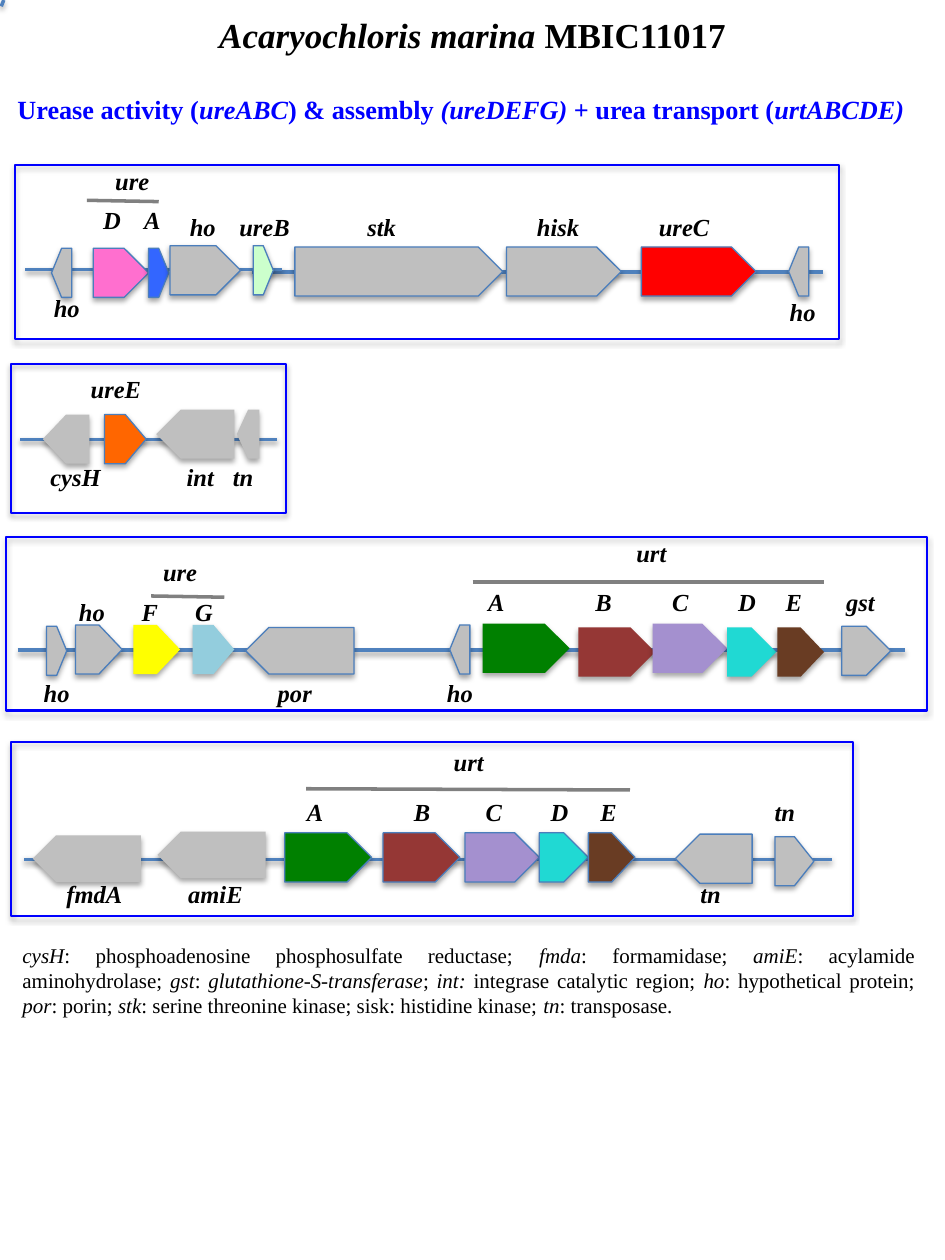
from lxml.etree import SubElement
from pptx import Presentation
from pptx.dml.color import RGBColor
from pptx.enum.shapes import MSO_CONNECTOR, MSO_SHAPE
from pptx.enum.text import MSO_ANCHOR, MSO_AUTO_SIZE, PP_ALIGN
from pptx.oxml.ns import qn
from pptx.util import Inches, Pt

BLACK = RGBColor(0x00, 0x00, 0x00)
FRAME_BLUE = RGBColor(0x00, 0x00, 0xFF)
BACKBONE = RGBColor(0x4F, 0x81, 0xBD)
OUTLINE = RGBColor(0x4B, 0x7E, 0xBC)
BAR_GRAY = RGBColor(0x80, 0x80, 0x80)
GRAY = RGBColor(0xBF, 0xBF, 0xBF)
PINK = RGBColor(0xFF, 0x6F, 0xCF)
BLUE = RGBColor(0x33, 0x66, 0xFF)
MINT = RGBColor(0xCC, 0xFF, 0xCC)
RED = RGBColor(0xFF, 0x00, 0x00)
ORANGE = RGBColor(0xFF, 0x66, 0x00)
YELLOW = RGBColor(0xFF, 0xFF, 0x00)
SKY = RGBColor(0x93, 0xCD, 0xDD)
GREEN = RGBColor(0x00, 0x80, 0x00)
MAROON = RGBColor(0x95, 0x37, 0x35)
PURPLE = RGBColor(0xA4, 0x90, 0xCF)
CYAN = RGBColor(0x20, 0xD9, 0xD3)
BROWN = RGBColor(0x69, 0x3C, 0x23)

# Gene options: reading direction and outline
FORWARD = {}
REVERSE = {"flipped": True}
PLAIN = {"outlined": False}
PLAIN_REVERSE = {**PLAIN, **REVERSE}
LOW_REVERSE = {**REVERSE, "height": 0.37}
LOW_PLAIN_REVERSE = {**PLAIN_REVERSE, "height": 0.37}

# frame: left, top, width, height; lines: x1, y1, x2, y2
# genes: left, top, width, fill, options; labels: centre y -> (centre x, text)
TRACKS = [
    {"frame": (0.12, 1.31, 6.54, 1.38),
     "backbones": [(2, 2.16, 6.53, 2.16), (0.2, 2.14, 2.24, 2.14)],
     "bars": [(0.69, 1.59, 1.26, 1.6)],
     "genes": [(0.74, 1.97, 0.44, PINK, FORWARD), (1.18, 1.97, 0.16, BLUE, FORWARD),
               (2.01, 1.95, 0.16, MINT, FORWARD), (1.35, 1.95, 0.56, GRAY, FORWARD),
               (5.09, 1.96, 0.91, RED, FORWARD), (2.34, 1.96, 1.65, GRAY, FORWARD),
               (6.26, 1.96, 0.16, GRAY, REVERSE), (4.02, 1.96, 0.91, GRAY, FORWARD),
               (0.41, 1.97, 0.16, GRAY, REVERSE)],
     "labels": {1.44: [(1.05, "ure")], 1.75: [(0.89, "D"), (1.21, "A")],
                1.8: [(1.61, "ho"), (2.1, "ureB"), (3.03, "stk"), (4.43, "hisk"),
                      (5.43, "ureC")],
                2.45: [(0.53, "ho")], 2.48: [(6.37, "ho")]}},
    {"frame": (0.09, 2.89, 2.18, 1.18),
     "backbones": [(0.16, 3.49, 2.2, 3.49)],
     "bars": [],
     "genes": [(0.83, 3.29, 0.33, ORANGE, FORWARD), (0.34, 3.29, 0.37, GRAY, PLAIN_REVERSE),
               (1.24, 3.25, 0.62, GRAY, PLAIN_REVERSE),
               (1.88, 3.25, 0.18, GRAY, PLAIN_REVERSE)],
     "labels": {3.09: [(0.92, "ureE")],
                3.79: [(0.6, "cysH"), (1.59, "int"), (1.93, "tn")]}},
    {"frame": (0.05, 4.26, 7.31, 1.38),
     "backbones": [(0.14, 5.16, 7.18, 5.16)],
     "bars": [(3.75, 4.62, 6.54, 4.62), (1.2, 4.73, 1.78, 4.74)],
     "genes": [(3.83, 4.95, 0.69, GREEN, PLAIN), (4.59, 4.98, 0.61, MAROON, PLAIN),
               (5.18, 4.95, 0.59, PURPLE, PLAIN), (5.77, 4.98, 0.39, CYAN, PLAIN),
               (6.17, 4.98, 0.37, BROWN, PLAIN), (1.95, 4.98, 0.86, GRAY, LOW_REVERSE),
               (3.57, 4.96, 0.16, GRAY, REVERSE), (1.53, 4.96, 0.33, SKY, PLAIN),
               (1.06, 4.96, 0.37, YELLOW, PLAIN), (0.6, 4.96, 0.37, GRAY, FORWARD),
               (0.37, 4.97, 0.16, GRAY, FORWARD), (6.68, 4.97, 0.39, GRAY, FORWARD)],
     "labels": {4.39: [(5.17, "urt")], 4.54: [(1.43, "ure")],
                4.78: [(3.94, "A"), (4.79, "B"), (5.4, "C"), (5.93, "D"), (6.3, "E"),
                       (6.83, "gst")],
                4.86: [(0.73, "ho"), (1.19, "F"), (1.62, "G")],
                5.5: [(0.45, "ho"), (2.34, "por"), (3.65, "ho")]}},
    {"frame": (0.09, 5.89, 6.68, 1.38),
     "backbones": [(6.6, 6.82, 0.19, 6.82)],
     "bars": [(2.43, 6.26, 5, 6.27)],
     "genes": [(2.26, 6.61, 0.69, GREEN, FORWARD), (3.04, 6.61, 0.61, MAROON, FORWARD),
               (3.69, 6.61, 0.59, PURPLE, FORWARD), (4.28, 6.61, 0.39, CYAN, FORWARD),
               (4.67, 6.61, 0.37, BROWN, FORWARD), (1.25, 6.6, 0.86, GRAY, LOW_PLAIN_REVERSE),
               (5.36, 6.62, 0.61, GRAY, REVERSE), (0.26, 6.63, 0.86, GRAY, LOW_PLAIN_REVERSE),
               (6.15, 6.64, 0.31, GRAY, FORWARD)],
     "labels": {6.05: [(3.72, "urt")],
                6.45: [(2.5, "A"), (3.35, "B"), (3.92, "C"), (4.44, "D"), (4.83, "E"),
                       (6.23, "tn")],
                7.1: [(0.75, "fmdA"), (1.71, "amiE"), (5.64, "tn")]}},
]

LEGEND = (
    "*cysH*: phosphoadenosine phosphosulfate reductase; *fmda*: formamidase; "
    "*amiE*: acylamide aminohydrolase; *gst*: *glutathione-S-transferase*; "
    "*int:* integrase catalytic region; *ho*: hypothetical protein; *por*: porin; "
    "*stk*: serine threonine kinase; sisk: histidine kinase; *tn*: transposase."
)


def write_text(frame, text, size=14, color=BLACK, bold=True, align=PP_ALIGN.CENTER,
               anchor=MSO_ANCHOR.TOP, wrap=True):
    """Fill a text frame; parts between asterisks are italic."""
    frame.auto_size = MSO_AUTO_SIZE.NONE
    frame.word_wrap = wrap
    frame.vertical_anchor = anchor
    paragraph = frame.paragraphs[0]
    paragraph.alignment = align
    for index, part in enumerate(text.split("*")):
        if part:
            run = paragraph.add_run()
            run.text = part
            run.font.name = "Times New Roman"
            run.font.size = Pt(size)
            run.font.bold = bold
            run.font.italic = index % 2 == 1
            run.font.color.rgb = color


def add_shadow(shape, distance=1.8, opacity=35):
    effects = SubElement(shape._element.spPr, qn("a:effectLst"))
    shadow = SubElement(effects, qn("a:outerShdw"), blurRad=str(Pt(3.1)),
                        dist=str(Pt(distance)), dir="5400000", rotWithShape="0")
    color = SubElement(shadow, qn("a:srgbClr"), val="000000")
    SubElement(color, qn("a:alpha"), val=str(opacity * 1000))


class GeneMap:
    def __init__(self, slide):
        self.slide = slide

    def title(self, text, box):
        shape = self.slide.shapes.title
        shape.left, shape.top, shape.width, shape.height = map(Inches, box)
        write_text(shape.text_frame, text, size=20, anchor=MSO_ANCHOR.MIDDLE)

    def text(self, text, box, **style):
        shape = self.slide.shapes.add_textbox(*map(Inches, box))
        write_text(shape.text_frame, text, **style)

    def label(self, center_x, center_y, text):
        self.text(f"*{text}*", (center_x - 0.35, center_y - 0.17, 0.7, 0.34), wrap=False)

    def line(self, ends, color, shadow=False):
        connector = self.slide.shapes.add_connector(MSO_CONNECTOR.STRAIGHT, *map(Inches, ends))
        connector.line.color.rgb = color
        connector.line.width = Pt(2)
        if shadow:
            add_shadow(connector, distance=1.6, opacity=38)
        else:
            SubElement(connector._element.spPr, qn("a:effectLst"))

    def frame(self, box):
        shape = self.slide.shapes.add_shape(MSO_SHAPE.RECTANGLE, *map(Inches, box))
        shape.fill.background()
        shape.line.color.rgb = FRAME_BLUE
        shape.line.width = Pt(1.25)
        add_shadow(shape)

    def gene(self, left, top, width, fill, height=0.39, flipped=False, outlined=True):
        box = map(Inches, (left, top, width, height))
        shape = self.slide.shapes.add_shape(MSO_SHAPE.PENTAGON, *box)
        shape.fill.solid()
        shape.fill.fore_color.rgb = fill
        if outlined:
            shape.line.color.rgb = OUTLINE
            shape.line.width = Pt(0.75)
        else:
            shape.line.fill.background()
        if flipped:
            shape._element.spPr.get_or_add_xfrm().set("flipH", "1")
        add_shadow(shape)

    def track(self, frame, backbones, bars, genes, labels):
        self.frame(frame)
        for ends in backbones:
            self.line(ends, BACKBONE, shadow=True)
        for left, top, width, fill, options in genes:
            self.gene(left, top, width, fill, **options)
        for ends in bars:
            self.line(ends, BAR_GRAY)
        for center_y, row in labels.items():
            for center_x, text in row:
                self.label(center_x, center_y, text)


def main():
    presentation = Presentation()
    presentation.slide_width = Inches(7.5)
    presentation.slide_height = Inches(10)
    gene_map = GeneMap(presentation.slides.add_slide(presentation.slide_layouts[5]))

    # Headings
    gene_map.title("*Acaryochloris marina *MBIC11017", (0, 0.05, 7.5, 0.44))
    gene_map.text("Urease activity (*ureABC*) & assembly *(ureDEFG) *+ urea transport (*urtABCDE)*",
                  (0.04, 0.69, 7.36, 0.35), size=15, color=FRAME_BLUE,
                  align=PP_ALIGN.LEFT, wrap=False)

    # Gene clusters
    for track in TRACKS:
        gene_map.track(**track)

    # Legend and corner stroke
    gene_map.text(LEGEND, (0.08, 7.43, 7.28, 0.91), size=12, bold=False,
                  align=PP_ALIGN.JUSTIFY)
    gene_map.line((0.01, 0.05, 0.03, 0), BACKBONE, shadow=True)

    presentation.save("out.pptx")


if __name__ == "__main__":
    main()
